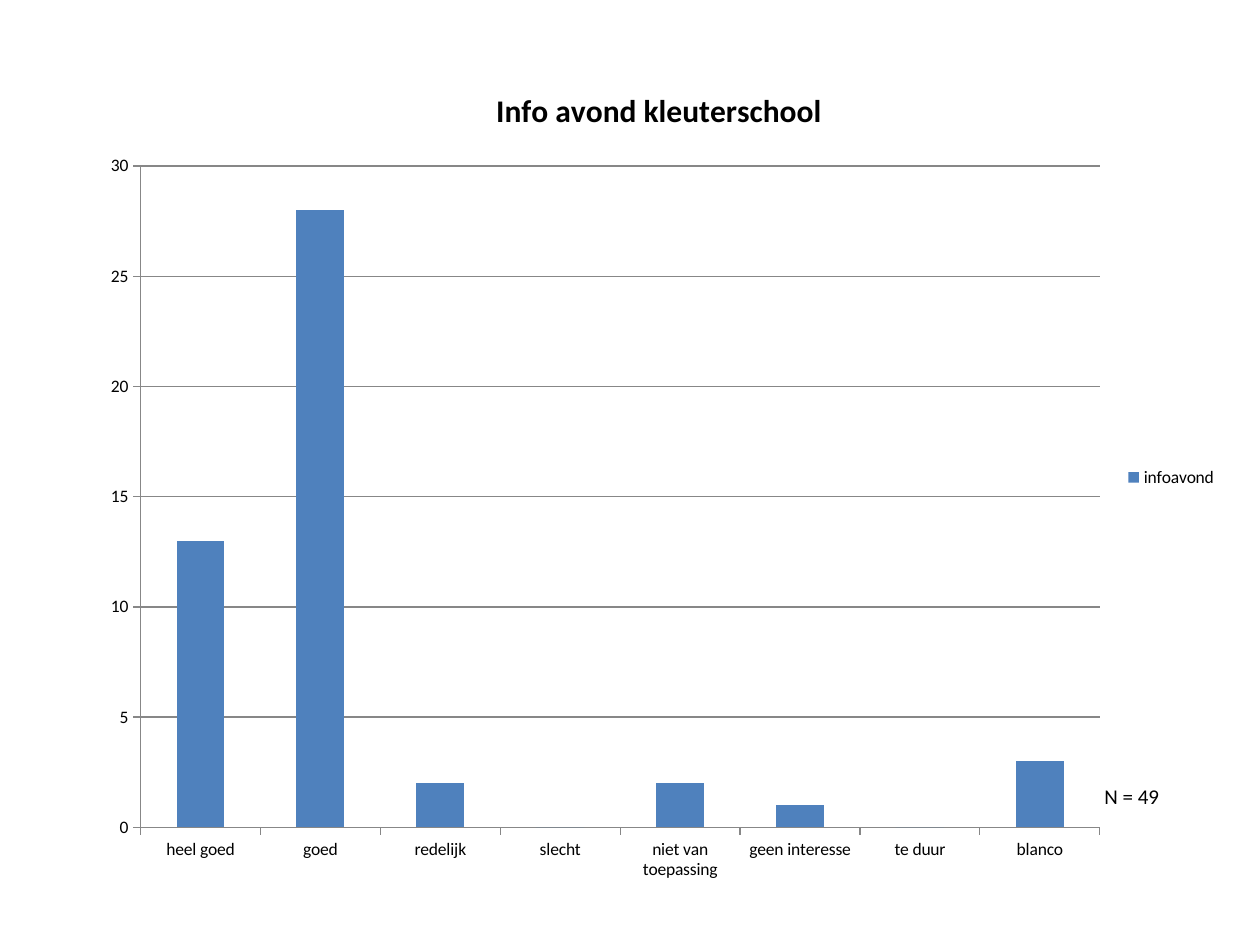
from pptx import Presentation
from pptx.chart.data import CategoryChartData
from pptx.dml.color import RGBColor
from pptx.enum.chart import XL_CHART_TYPE, XL_LEGEND_POSITION, XL_TICK_MARK
from pptx.enum.text import MSO_AUTO_SIZE
from pptx.util import Pt

PX = 914400 // 126
BLACK = RGBColor(0x00, 0x00, 0x00)
BLUE = RGBColor(0x4F, 0x81, 0xBD)
GREY = RGBColor(0x87, 0x87, 0x87)
COLUMN = XL_CHART_TYPE.COLUMN_CLUSTERED
RIGHT = XL_LEGEND_POSITION.RIGHT
OUTSIDE = XL_TICK_MARK.OUTSIDE
GROW = MSO_AUTO_SIZE.SHAPE_TO_FIT_TEXT


def style(font, size, bold=False):
    font.name = "Calibri"
    font.size = Pt(size)
    font.bold = bold
    font.color.rgb = BLACK


prs = Presentation()
prs.slide_width, prs.slide_height = 1260 * PX, 945 * PX
slide = prs.slides.add_slide(prs.slide_layouts[6])

# Answers per category
votes = {
    "heel goed": 13,
    "goed": 28,
    "redelijk": 2,
    "slecht": 0,
    "niet van toepassing": 2,
    "geen interesse": 1,
    "te duur": 0,
    "blanco": 3,
}
data = CategoryChartData()
data.categories = list(votes)
data.add_series("infoavond", list(votes.values()))
chart = slide.shapes.add_chart(
    COLUMN, 88 * PX, 59 * PX, 1142 * PX, 837 * PX, data
).chart
style(chart.font, 10)

chart.has_title = True
title = chart.chart_title.text_frame
title.text = "Info avond kleuterschool"
style(title.paragraphs[0].font, 18, True)

chart.has_legend = True
chart.legend.position = RIGHT
chart.legend.include_in_layout = False

plot = chart.plots[0]
plot.gap_width = 150
plot.vary_by_categories = False
fill = plot.series[0].format.fill
fill.solid()
fill.fore_color.rgb = BLUE

values = chart.value_axis
values.minimum_scale, values.maximum_scale, values.major_unit = 0, 30, 5
values.has_major_gridlines = True
for axis in (chart.category_axis, values):
    axis.major_tick_mark = OUTSIDE
for part in (chart.category_axis, values, values.major_gridlines):
    part.format.line.color.rgb = GREY
    part.format.line.width = Pt(0.75)

# Number of answers
note = slide.shapes.add_textbox(1092 * PX, 777 * PX, 147 * PX, 38 * PX).text_frame
note.word_wrap = True
note.auto_size = GROW
note.text = "N = 49"
style(note.paragraphs[0].font, 12)

prs.save("out.pptx")
